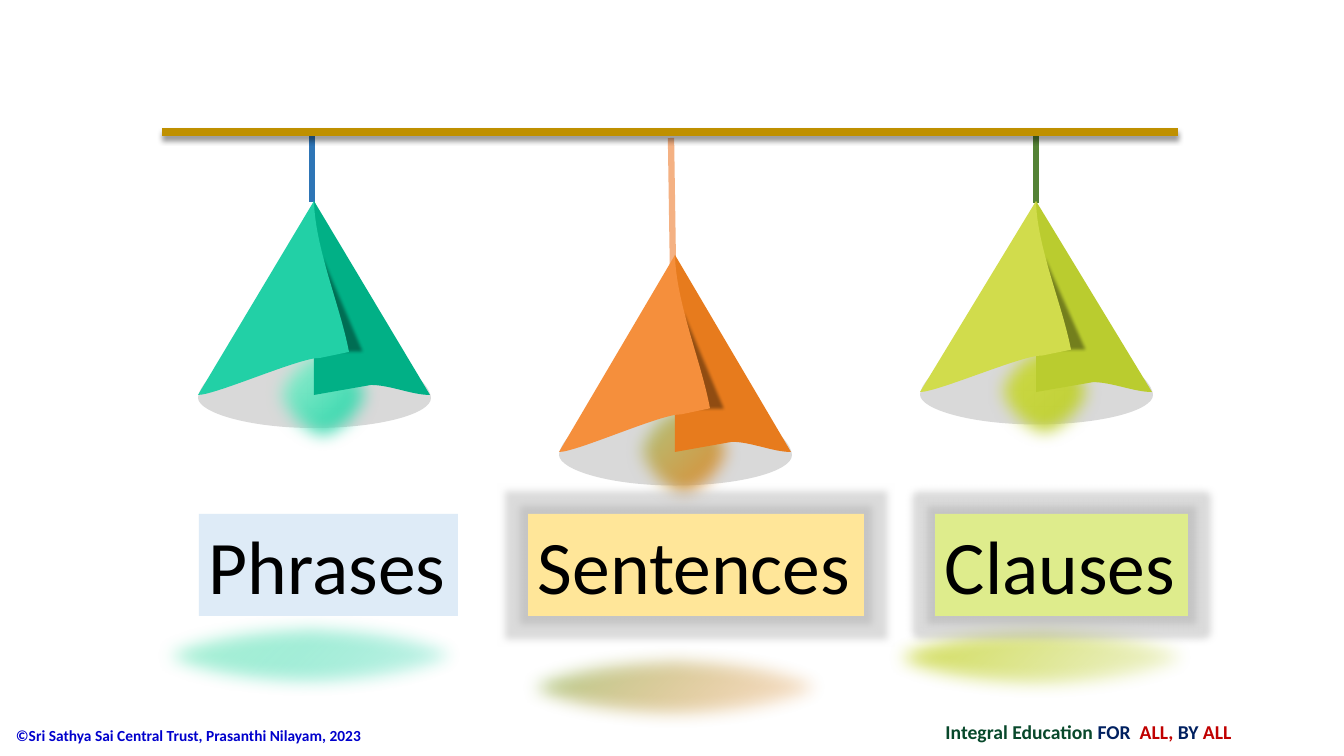
from lxml import etree
from pptx import Presentation
from pptx.dml.color import RGBColor
from pptx.enum.shapes import MSO_CONNECTOR, MSO_SHAPE
from pptx.enum.text import MSO_ANCHOR, MSO_AUTO_SIZE, PP_ALIGN
from pptx.oxml.ns import qn
from pptx.util import Emu, Pt

PX = 914400 / 100.8
OVAL, RECT, TRIANGLE = MSO_SHAPE.OVAL, MSO_SHAPE.RECTANGLE, MSO_SHAPE.RIGHT_TRIANGLE
STRAIGHT = MSO_CONNECTOR.STRAIGHT
TOP, MIDDLE = MSO_ANCHOR.TOP, MSO_ANCHOR.MIDDLE
LEFT, CENTER = PP_ALIGN.LEFT, PP_ALIGN.CENTER
FIT = MSO_AUTO_SIZE.SHAPE_TO_FIT_TEXT

BLACK = RGBColor(0, 0, 0)
BOWL_GREY = RGBColor(0xD9, 0xD9, 0xD9)
BAR_GOLD = RGBColor(0xBF, 0x90, 0x00)
BLUE = RGBColor(0, 0, 0xCC)
GREEN = RGBColor(0x08, 0x48, 0x2B)
NAVY = RGBColor(0x00, 0x20, 0x60)
RED = RGBColor(0xC0, 0, 0)

TEAL_GLOW = [(0, "00CC9B"), (95, "BAF5DB"), (100, "DEF9ED")]
LIME_GLOW = [(0, "BACC2F"), (100, "D1DC4C")]
ORANGE_GLOW = [(0, "E77B1D"), (95, "A9D18E")]

# Each lamp: apex, shade height, light and dark flap, glow stops, floor top-left
LAMPS = [
    dict(apex=(314, 201), height=194, light=RGBColor(0x22, 0xD0, 0xA6),
         dark=RGBColor(0x01, 0xB0, 0x86), glow=TEAL_GLOW, floor=(140, 613)),
    dict(apex=(1036, 201), height=191, light=RGBColor(0xD1, 0xDC, 0x4C),
         dark=RGBColor(0xBA, 0xCC, 0x2F), glow=LIME_GLOW, floor=(871, 615)),
    dict(apex=(675, 255), height=197, light=RGBColor(0xF5, 0x8F, 0x3C),
         dark=RGBColor(0xE7, 0x7B, 0x1D), glow=ORANGE_GLOW, floor=(505, 645)),
]
CORDS = [
    ((312, 131), (312, 202), RGBColor(0x2E, 0x75, 0xB6)),
    ((1036, 132), (1036, 203), RGBColor(0x54, 0x82, 0x35)),
    ((671, 138), (673, 269), RGBColor(0xF4, 0xB1, 0x83)),
]
LABELS = [
    ("Phrases", 199, 259, RGBColor(0xDE, 0xEB, 0xF7), False),
    ("Sentences", 528, 336, RGBColor(0xFF, 0xE6, 0x99), True),
    ("Clauses", 935, 253, RGBColor(0xDE, 0xEC, 0x8C), True),
]
COPYRIGHT = [("©Sri Sathya Sai Central Trust, Prasanthi Nilayam, 2023", BLUE)]
MOTTO = [("Integral Education ", GREEN), ("FOR  ", NAVY), ("ALL, ", RED),
         ("BY", NAVY), (" ALL", RED)]

# Outlines measured from the apex of a shade UNIT high:
# a start point, then lines (one point) or curves (three points)
UNIT = 194
BOWL = [[(-116, 197)], [(-116, 180), (-67, 133), (-3, 133)],
        [(61, 133), (117, 179), (117, 197)], [(117, 213), (65, 227), (0, 227)],
        [(-64, 227), (-115, 212), (-116, 197)]]
DARK_FLAP = [[(0, 194)], [(0, 0)], [(116, 194)], [(98, 194), (76, 184), (57, 184)]]
LIGHT_FLAP = [[(35, 151)], [(26, 104), (1, 47), (0, 0)], [(-116, 194)],
              [(-98, 194), (-13, 156), (6, 157)]]
FOLD_SHADOW = (6, 38, 49, 116)
BULB = (-52, 132, 122, 122)


def px(*values):
    return [Emu(round(v * PX)) for v in values]


def add_effects(sp, effects):
    xml = ('<a:effectLst xmlns:a="http://schemas.openxmlformats.org/drawingml/2006/main">'
           f'{effects}</a:effectLst>')
    spPr = sp._element.spPr
    for old in spPr.findall(qn("a:effectLst")):
        spPr.remove(old)
    spPr.append(etree.fromstring(xml))


def tint(color, alpha):
    return f'<a:srgbClr val="{color}"><a:alpha val="{alpha * 1000}"/></a:srgbClr>'


def soft_edge(points):
    return f'<a:softEdge rad="{Pt(points)}"/>'


def paint(sp, color):
    sp.shadow.inherit = False
    sp.line.fill.background()
    sp.fill.solid()
    sp.fill.fore_color.rgb = color


def add_outline(shapes, outline, apex, scale, color):
    """Draw every point as a line, then join each run of three into a curve."""
    start, *rest = [px(apex[0] + x, apex[1] + y * scale) for part in outline for x, y in part]
    builder = shapes.build_freeform(*start)
    builder.add_line_segments(rest, close=True)
    sp = builder.convert_to_shape()
    paint(sp, color)
    lines = list(sp._element.spPr.iter(qn("a:lnTo")))
    for part in outline[1:]:
        steps, lines = lines[:len(part)], lines[len(part):]
        if len(part) == 3:
            curve = etree.Element(qn("a:cubicBezTo"))
            steps[0].addprevious(curve)
            for step in steps:
                curve.append(step[0])
                step.getparent().remove(step)


def add_glow(shapes, box, stops, edge, first_alpha=100):
    """Soft-edged ellipse shaded outwards from its lower right corner."""
    sp = shapes.add_shape(OVAL, *px(*box))
    paint(sp, BLACK)
    alphas = [first_alpha] + [100] * (len(stops) - 1)
    gs = "".join(f'<a:gs pos="{pos * 1000}">{tint(color, alpha)}</a:gs>'
                 for (pos, color), alpha in zip(stops, alphas))
    grad = etree.fromstring(
        '<a:gradFill xmlns:a="http://schemas.openxmlformats.org/drawingml/2006/main">'
        f'<a:gsLst>{gs}</a:gsLst><a:path path="circle">'
        '<a:fillToRect l="100000" t="100000"/></a:path></a:gradFill>')
    spPr = sp._element.spPr
    spPr.replace(spPr.find(qn("a:solidFill")), grad)
    add_effects(sp, soft_edge(edge))


def add_line(shapes, start, end, color, width, effects=""):
    line = shapes.add_connector(STRAIGHT, *px(*start, *end))
    line.line.color.rgb = color
    line.line.width = Pt(width)
    add_effects(line, effects)


def add_lamp(shapes, lamp):
    apex, scale = lamp["apex"], lamp["height"] / UNIT

    def place(box):
        x, y, w, h = box
        return apex[0] + x, apex[1] + y * scale, w, h * scale

    add_outline(shapes, BOWL, apex, scale, BOWL_GREY)
    add_glow(shapes, place(BULB), lamp["glow"], 12.5)
    shade = shapes.add_group_shape().shapes
    add_outline(shade, DARK_FLAP, apex, scale, lamp["dark"])
    fold = shade.add_shape(TRIANGLE, *px(*place(FOLD_SHADOW)))
    paint(fold, BLACK)
    color = fold._element.spPr.find(qn("a:solidFill"))[0]
    etree.SubElement(color, qn("a:alpha")).set("val", "38000")
    add_effects(fold, soft_edge(2.5))
    add_outline(shade, LIGHT_FLAP, apex, scale, lamp["light"])


def add_label(shapes, text, left, width, color, halo):
    sp = shapes.add_shape(RECT, *px(left, 514, width, 102))
    paint(sp, color)
    if halo:
        add_effects(sp, f'<a:glow rad="{Pt(11)}">{tint("A5A5A5", 40)}</a:glow>')
    tf = sp.text_frame
    tf.word_wrap = False
    tf.auto_size = FIT
    tf.vertical_anchor = TOP
    p = tf.paragraphs[0]
    p.text = text
    p.alignment = LEFT
    p.font.name, p.font.size, p.font.color.rgb = "Calibri", Pt(54), BLACK


def add_footer(shapes, box, runs, size, align):
    tf = shapes.add_textbox(*px(*box)).text_frame
    tf.word_wrap = True
    tf.vertical_anchor = MIDDLE
    p = tf.paragraphs[0]
    p.alignment = align
    p.font.name, p.font.size, p.font.bold = "Calibri", Pt(size), True
    for text, color in runs:
        r = p.add_run()
        r.text = text
        r.font.color.rgb = color


prs = Presentation()
prs.slide_width, prs.slide_height = px(1344, 756)
shapes = prs.slides.add_slide(prs.slide_layouts[6]).shapes

add_footer(shapes, (6, 715, 384, 41), COPYRIGHT, 11, LEFT)
add_footer(shapes, (842, 709, 493, 45), MOTTO, 14, CENTER)
for start, end, color in CORDS:
    add_line(shapes, start, end, color, 4.5)
for lamp in LAMPS:
    add_lamp(shapes, lamp)
add_line(shapes, (162, 132), (1178, 132), BAR_GOLD, 6,
         f'<a:outerShdw blurRad="{Pt(4)}" dist="{Pt(3)}" dir="5400000">'
         f'{tint("000000", 40)}</a:outerShdw>')
for lamp in LAMPS:
    add_glow(shapes, (*lamp["floor"], 342, 85), lamp["glow"], 12.5, 10)
for label in LABELS:
    add_label(shapes, *label)
prs.save("out.pptx")
